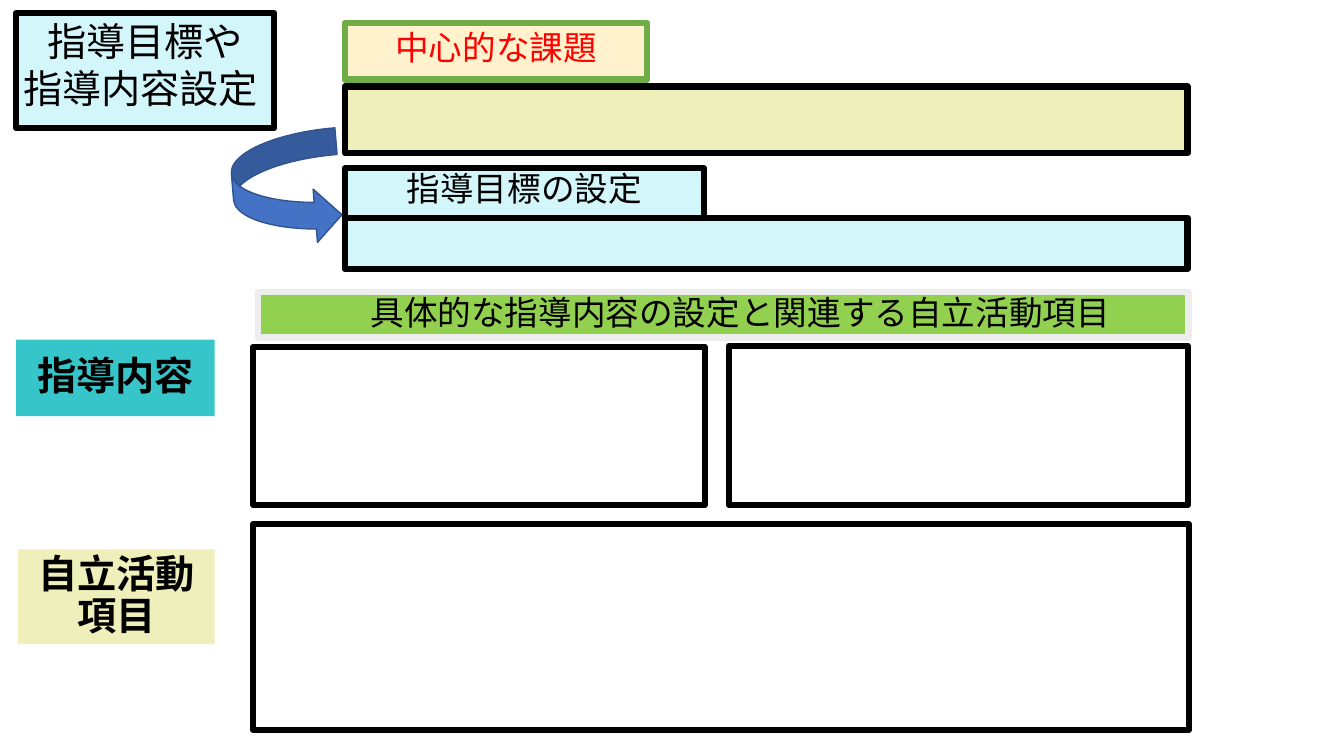
from pptx import Presentation
from pptx.dml.color import RGBColor
from pptx.enum.shapes import MSO_SHAPE
from pptx.enum.text import MSO_ANCHOR, MSO_AUTO_SIZE, PP_ALIGN
from pptx.util import Inches, Pt

BLACK = RGBColor(0x00, 0x00, 0x00)
RED = RGBColor(0xFF, 0x00, 0x00)
PALE_BLUE = RGBColor(0xD3, 0xF6, 0xFB)
PALE_YELLOW = RGBColor(0xEE, 0xEF, 0xBB)
CREAM = RGBColor(0xFF, 0xF2, 0xCC)
GREEN = RGBColor(0x70, 0xAD, 0x47)
LIME = RGBColor(0x92, 0xD0, 0x50)
LIGHT_GRAY = RGBColor(0xED, 0xED, 0xED)
TEAL = RGBColor(0x36, 0xC6, 0xCA)
BLUE = RGBColor(0x44, 0x72, 0xC4)
DARK_BLUE = RGBColor(0x31, 0x53, 0x8F)

TOP_LEFT = 3.42
TOP_WIDTH = 8.36
LOWER_LEFT = 2.51


class WorksheetSlide:
    """Draws the titled boxes of a planning worksheet in one shared style."""

    font_name = "Arial"
    border = 4.5

    def __init__(self, presentation):
        self.slide = presentation.slides.add_slide(presentation.slide_layouts[5])

    def paint(self, shape, fill, line, line_width):
        if fill is None:
            shape.fill.background()
        else:
            shape.fill.solid()
            shape.fill.fore_color.rgb = fill
        if line is None:
            shape.line.fill.background()
        else:
            shape.line.color.rgb = line
            shape.line.width = Pt(line_width)

    def set_text(self, shape, text, size, color=BLACK, bold=False,
                 anchor=MSO_ANCHOR.TOP, spacing=0.9):
        text_frame = shape.text_frame
        text_frame.text = text
        text_frame.word_wrap = True
        text_frame.auto_size = MSO_AUTO_SIZE.NONE
        text_frame.vertical_anchor = anchor
        text_frame.margin_left = text_frame.margin_right = Inches(0.07)
        text_frame.margin_top = text_frame.margin_bottom = Inches(0.04)
        for paragraph in text_frame.paragraphs:
            paragraph.alignment = PP_ALIGN.CENTER
            paragraph.line_spacing = spacing
            for run in paragraph.runs:
                run.font.name = self.font_name
                run.font.size = Pt(size)
                run.font.bold = bold
                run.font.color.rgb = color

    def title(self, text, left, top, width, height):
        shape = self.slide.shapes.title
        shape.left, shape.top = Inches(left), Inches(top)
        shape.width, shape.height = Inches(width), Inches(height)
        self.paint(shape, PALE_BLUE, BLACK, self.border)
        self.set_text(shape, text, 28, spacing=1.0)
        shape.text_frame.paragraphs[1].alignment = PP_ALIGN.LEFT

    def box(self, left, top, width, height, fill=None, line=BLACK,
            kind=MSO_SHAPE.RECTANGLE, line_width=border):
        shape = self.slide.shapes.add_shape(
            kind, Inches(left), Inches(top), Inches(width), Inches(height))
        shape.shadow.inherit = False
        self.paint(shape, fill, line, line_width)
        return shape

    def heading(self, text, left, top, width, height, fill, line=BLACK,
                color=BLACK, spacing=0.9):
        shape = self.box(left, top, width, height, fill, line)
        self.set_text(shape, text, 24, color, spacing=spacing)

    def row_label(self, text, left, top, width, height, fill):
        shape = self.box(left, top, width, height, fill, None)
        self.set_text(shape, text, 28, bold=True, anchor=MSO_ANCHOR.MIDDLE)

    def curved_arrow(self, left, top, width, height, rotation):
        shape = self.box(left, top, width, height, BLUE, DARK_BLUE,
                         MSO_SHAPE.CURVED_RIGHT_ARROW, 1)
        shape.rotation = rotation


def main():
    presentation = Presentation()
    presentation.slide_width = Inches(13.33)
    presentation.slide_height = Inches(7.5)
    worksheet = WorksheetSlide(presentation)

    worksheet.title("指導目標や\n指導内容設定", 0.16, 0.13, 2.56, 1.14)
    worksheet.heading("指導目標の設定", TOP_LEFT, 1.67, 3.56, 0.49, PALE_BLUE)
    worksheet.box(LOWER_LEFT, 5.2, 9.28, 2.04)
    worksheet.heading("　具体的な指導内容の設定と関連する自立活動項目",
                      2.56, 2.9, 9.23, 0.45, LIME, LIGHT_GRAY)
    worksheet.box(TOP_LEFT, 2.16, TOP_WIDTH, 0.51, PALE_BLUE)
    worksheet.box(7.23, 3.43, 4.55, 1.58)
    worksheet.box(LOWER_LEFT, 3.44, 4.48, 1.57)
    worksheet.row_label("指導内容", 0.16, 3.37, 1.97, 0.76, TEAL)
    worksheet.row_label("自立活動項目", 0.18, 5.45, 1.95, 0.94, PALE_YELLOW)
    worksheet.box(TOP_LEFT, 0.86, TOP_WIDTH, 0.66, PALE_YELLOW)
    worksheet.heading("中心的な課題", TOP_LEFT, 0.23, 3, 0.56, CREAM, GREEN,
                      RED, spacing=1.0)
    worksheet.curved_arrow(2.31, 1.31, 1.06, 1.13, 355.3)

    presentation.save("out.pptx")


if __name__ == "__main__":
    main()
